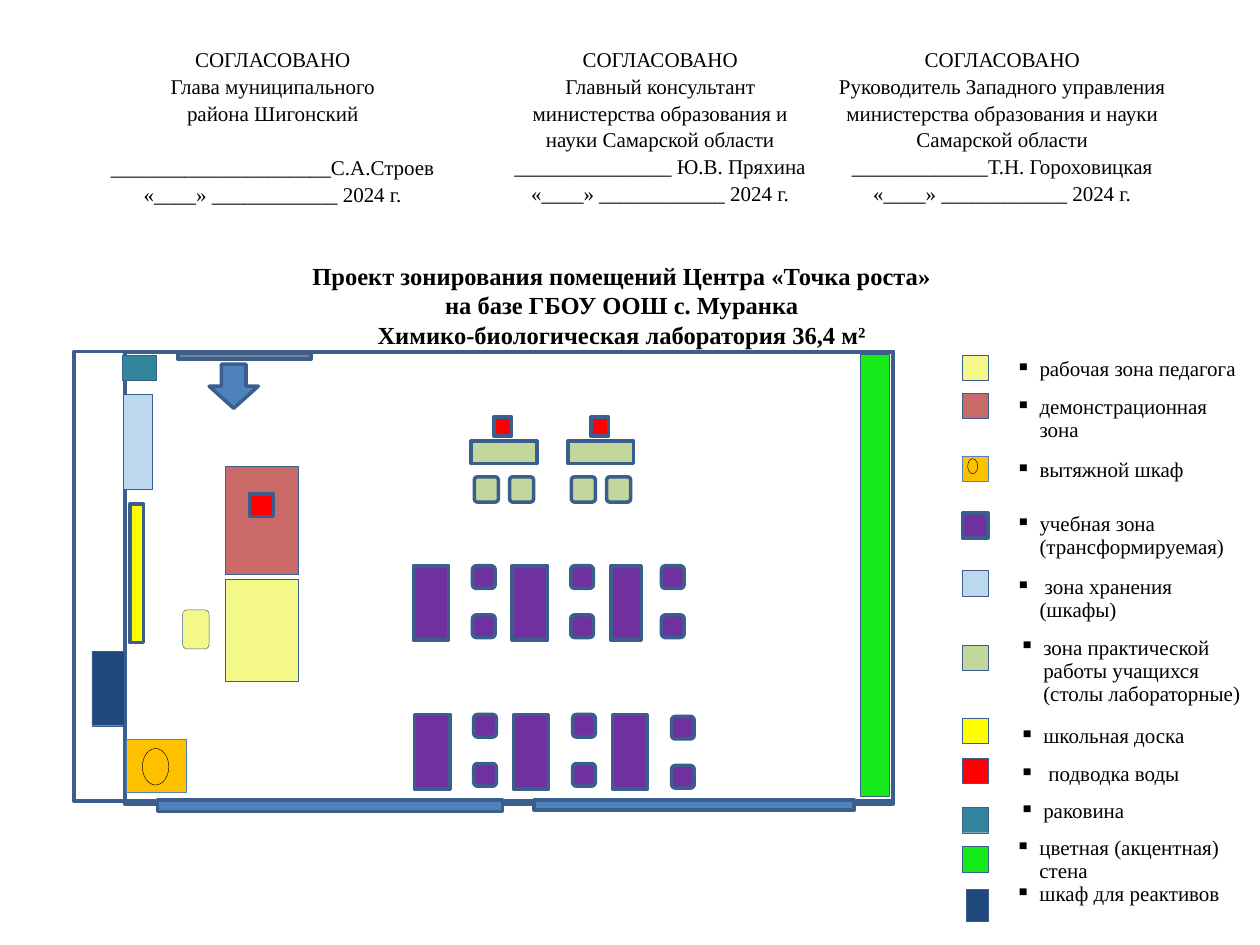
from collections import namedtuple

from lxml import etree
from pptx import Presentation
from pptx.dml.color import RGBColor
from pptx.enum.shapes import MSO_SHAPE
from pptx.enum.text import PP_ALIGN
from pptx.oxml.ns import qn
from pptx.util import Inches, Pt

RECTANGLE = MSO_SHAPE.RECTANGLE
ROUNDED = MSO_SHAPE.ROUNDED_RECTANGLE
OVAL = MSO_SHAPE.OVAL
DOWN_ARROW = MSO_SHAPE.DOWN_ARROW
CENTER = PP_ALIGN.CENTER
LEFT = PP_ALIGN.LEFT

BLACK = RGBColor(0x00, 0x00, 0x00)
WHITE = RGBColor(0xFF, 0xFF, 0xFF)
OUTLINE = RGBColor(0x3A, 0x5F, 0x8C)
BLUE = RGBColor(0x4F, 0x81, 0xBD)
TEACHER = RGBColor(0xF3, 0xF8, 0x88)
DEMO = RGBColor(0xCA, 0x6A, 0x68)
HOOD = RGBColor(0xFF, 0xC0, 0x00)
STUDY = RGBColor(0x70, 0x30, 0xA0)
STORAGE = RGBColor(0xBD, 0xD7, 0xEE)
LAB = RGBColor(0xC3, 0xD6, 0x9B)
BOARD = RGBColor(0xFF, 0xFF, 0x00)
WATER = RGBColor(0xFF, 0x00, 0x00)
SINK = RGBColor(0x31, 0x85, 0x9C)
ACCENT = RGBColor(0x16, 0xEA, 0x1B)
REAGENT = RGBColor(0x1F, 0x49, 0x7D)
DOOR = RGBColor(0x80, 0x80, 0x80)

FONT = "Times New Roman"
SLIDE_WIDTH, SLIDE_HEIGHT = Inches(10), Inches(7.5)
COLUMN, ROW = SLIDE_WIDTH / 100, SLIDE_HEIGHT / 75
THIN, THICK, WALL = 0.25, 2, 2.25

Box = namedtuple("Box", "left top width height")


def inside(box, left, top, width, height):
    return Box(box.left + left, box.top + top, width, height)


def to_lengths(box):
    return (round(box.left * COLUMN), round(box.top * ROW),
            round(box.width * COLUMN), round(box.height * ROW))


def add_part(slide, box, fill=None, kind=RECTANGLE, line=OUTLINE, weight=THIN, corner=None):
    shape = slide.shapes.add_shape(kind, *to_lengths(box))
    shape.shadow.inherit = False
    if fill is None:
        shape.fill.background()
    else:
        shape.fill.solid()
        shape.fill.fore_color.rgb = fill
    shape.line.color.rgb = line
    shape.line.width = Pt(weight)
    if corner is not None:
        shape.adjustments[0] = corner
    return shape


def add_text(frame, lines, size=12, bold=False, align=LEFT, spacing=None, gap_after=None, bullet=None):
    frame.word_wrap = True
    for index, line in enumerate(lines):
        paragraph = frame.paragraphs[0] if index == 0 else frame.add_paragraph()
        paragraph.alignment = align
        if spacing:
            paragraph.line_spacing = spacing
        if index == gap_after:
            paragraph.space_after = Pt(15.8)
        if bullet:
            properties = paragraph._p.get_or_add_pPr()
            properties.set("marL", str(Inches(0.19)))
            properties.set("indent", str(-Inches(0.19)))
            etree.SubElement(properties, qn("a:buChar"), char=bullet)
        run = paragraph.add_run()
        run.text = line
        run.font.name = FONT
        run.font.size = Pt(size)
        run.font.bold = bold
        run.font.color.rgb = BLACK


def add_plain_table(slide, box, columns, rows, fill=None):
    frame = slide.shapes.add_table(len(rows), len(columns), *to_lengths(box))
    table = frame.table
    table.first_row = table.horz_banding = False
    for column, width in zip(table.columns, columns):
        column.width = round(width * COLUMN)
    for row, height in zip(table.rows, rows):
        row.height = round(height * ROW)
    for cell in table.iter_cells():
        if fill is None:
            cell.fill.background()
        else:
            cell.fill.solid()
            cell.fill.fore_color.rgb = fill
    return table


def add_approvals(slide, box):
    date = "«____» ____________ 2024 г."
    approvals = [
        (["Глава муниципального", "района Шигонский", "_____________________С.А.Строев"], 2),
        (["Главный консультант министерства образования и науки Самарской области",
          "_______________ Ю.В. Пряхина"], None),
        (["Руководитель Западного управления министерства образования и науки Самарской области",
          "_____________Т.Н. Гороховицкая"], None),
    ]
    table = add_plain_table(slide, box, [35.5, 26, 28.3], [box.height])
    for index, (lines, gap_after) in enumerate(approvals):
        add_text(table.cell(0, index).text_frame, ["СОГЛАСОВАНО", *lines, date],
                 align=CENTER, spacing=1.15, gap_after=gap_after)


def add_title(slide, box):
    frame = slide.shapes.add_textbox(*to_lengths(box)).text_frame
    add_text(frame, ["Проект зонирования помещений Центра «Точка роста»",
                     "на базе ГБОУ ООШ с. Муранка",
                     "Химико-биологическая лаборатория 36,4 м²"],
             size=14, bold=True, align=CENTER)


def add_legend_table(slide, box, columns, rows, fill=None, margin=None):
    table = add_plain_table(slide, box, columns, [height for height, _ in rows], fill)
    for index, (_, lines) in enumerate(rows):
        swatch, label = table.cell(index, 0), table.cell(index, 1)
        etree.SubElement(swatch.text_frame.paragraphs[0]._p, qn("a:endParaRPr"), sz="1200")
        if margin is not None:
            label.margin_left = label.margin_right = round(margin * COLUMN)
            label.margin_top = label.margin_bottom = 0
        add_text(label.text_frame, lines, bullet="▪")


def add_legend(slide, box):
    add_legend_table(slide, inside(box, 0.3, 0, 22.9, 21.9), [2.9, 20], [
        (3, ["рабочая зона педагога"]),
        (4.9, ["демонстрационная зона"]),
        (4.3, ["вытяжной шкаф"]),
        (5, ["учебная зона (трансформируемая)"]),
        (4.7, [" зона хранения (шкафы)"])], fill=WHITE)
    add_legend_table(slide, inside(box, 0.7, 22.1, 22.9, 16.2), [2.8, 20.1], [
        (7, ["зона практической работы учащихся (столы лабораторные)"]),
        (3, ["школьная доска"]),
        (3, [" подводка воды"]),
        (3.2, ["раковина"])])
    add_legend_table(slide, inside(box, 0.7, 38.5, 22.9, 8.6), [2.8, 20.1], [
        (8.6, ["цветная (акцентная) стена", "шкаф для реактивов"])], margin=0.7)
    for top, fill in [(0.3, TEACHER), (3.3, DEMO), (8.3, HOOD), (12.8, STUDY),
                      (17.4, STORAGE), (23.3, LAB), (29.1, BOARD), (32.3, WATER),
                      (36.2, SINK), (39.3, ACCENT)]:
        add_part(slide, inside(box, 0, top, 2, 2), fill,
                 line=BLUE if fill == HOOD else OUTLINE,
                 weight=THICK if fill == STUDY else THIN)
    add_part(slide, inside(box, 0.4, 8.5, 0.8, 1.2), HOOD, OVAL, BLACK)
    add_part(slide, inside(box, 0.3, 42.7, 1.7, 2.5), REAGENT)


def add_lab_station(slide, box):
    add_part(slide, inside(box, 1.8, 0, 1.4, 1.5), WATER, weight=THICK)
    add_part(slide, inside(box, 0, 1.9, box.width, 1.8), LAB, weight=THICK)
    for left in (0.25, 3.05):
        add_part(slide, inside(box, left, 4.75, 1.9, 2), LAB, ROUNDED, weight=THICK, corner=0.13)


def add_study_place(slide, box, chair_left, chair_drop):
    add_part(slide, box, STUDY, weight=THICK)
    for top in (0, 3.9):
        add_part(slide, inside(box, chair_left, top + chair_drop, 1.8, 1.8),
                 STUDY, ROUNDED, weight=THICK)


def add_room(slide, box):
    add_part(slide, inside(box, 10.7, 1, 3.9, 3.5), BLUE, DOWN_ARROW, weight=THICK)
    add_part(slide, inside(box, 4, 0, box.width - 4, box.height + 0.2), weight=WALL)
    add_part(slide, inside(box, 4.4, 12.1, 1.1, 11), BOARD, weight=THICK)
    add_part(slide, inside(box, 12, 18.1, 5.8, 8.1), TEACHER)
    add_part(slide, inside(box, 4.1, 30.8, 4.8, 4.2), HOOD, line=BLUE)
    add_part(slide, inside(box, 5.4, 31.5, 2.1, 2.9), HOOD, OVAL, BLACK)
    add_part(slide, inside(box, 62.4, 0.2, 2.3, 35.1), ACCENT)
    add_part(slide, inside(box, 1.4, 23.8, 2.6, 5.9), REAGENT)
    add_part(slide, inside(box, 8.6, 20.5, 2.1, 3.1), TEACHER, ROUNDED)
    add_part(slide, box, weight=WALL)
    add_part(slide, inside(box, 6.6, 35.6, 27.4, 0.9), BLUE, weight=THICK)
    add_part(slide, inside(box, 8.2, 0.1, 10.6, 0.5), DOOR, weight=WALL)
    add_part(slide, inside(box, 36.5, 35.6, 25.4, 0.8), BLUE, weight=THICK)
    add_part(slide, inside(box, 3.9, 3.4, 2.3, 7.5), STORAGE)
    add_part(slide, inside(box, 12, 9.1, 5.8, 8.6), DEMO)
    add_part(slide, inside(box, 3.8, 0.3, 2.7, 2), SINK)
    add_part(slide, inside(box, 13.9, 11.3, 1.9, 1.8), WATER, weight=THICK)
    for index in range(2):
        add_lab_station(slide, inside(box, 31.5 + 7.7 * index, 5.2, 5.2, 6.7))
    study_rows = [
        (26.9, 17, [(2.8, 4.7, 0), (2.8, 4.65, 0), (2.4, 4, 0)]),
        (27, 28.8, [(2.8, 4.7, 0), (2.8, 4.7, 0), (2.8, 4.7, 0.15)]),
    ]
    for left, top, places in study_rows:
        for index, (width, chair_left, chair_drop) in enumerate(places):
            add_study_place(slide, inside(box, left + 7.85 * index, top, width, 5.9),
                            chair_left, chair_drop)


def main():
    presentation = Presentation()
    presentation.slide_width, presentation.slide_height = SLIDE_WIDTH, SLIDE_HEIGHT
    slide = presentation.slides.add_slide(presentation.slide_layouts[6])
    add_title(slide, Box(7.5, 20.2, 83.7, 8.1))
    add_legend(slide, Box(76.4, 27.9, 23.6, 47.1))
    add_approvals(slide, Box(3.9, 3.1, 89.8, 17.1))
    add_room(slide, Box(5.9, 27.9, 65, 35.7))
    presentation.save("out.pptx")


if __name__ == "__main__":
    main()
